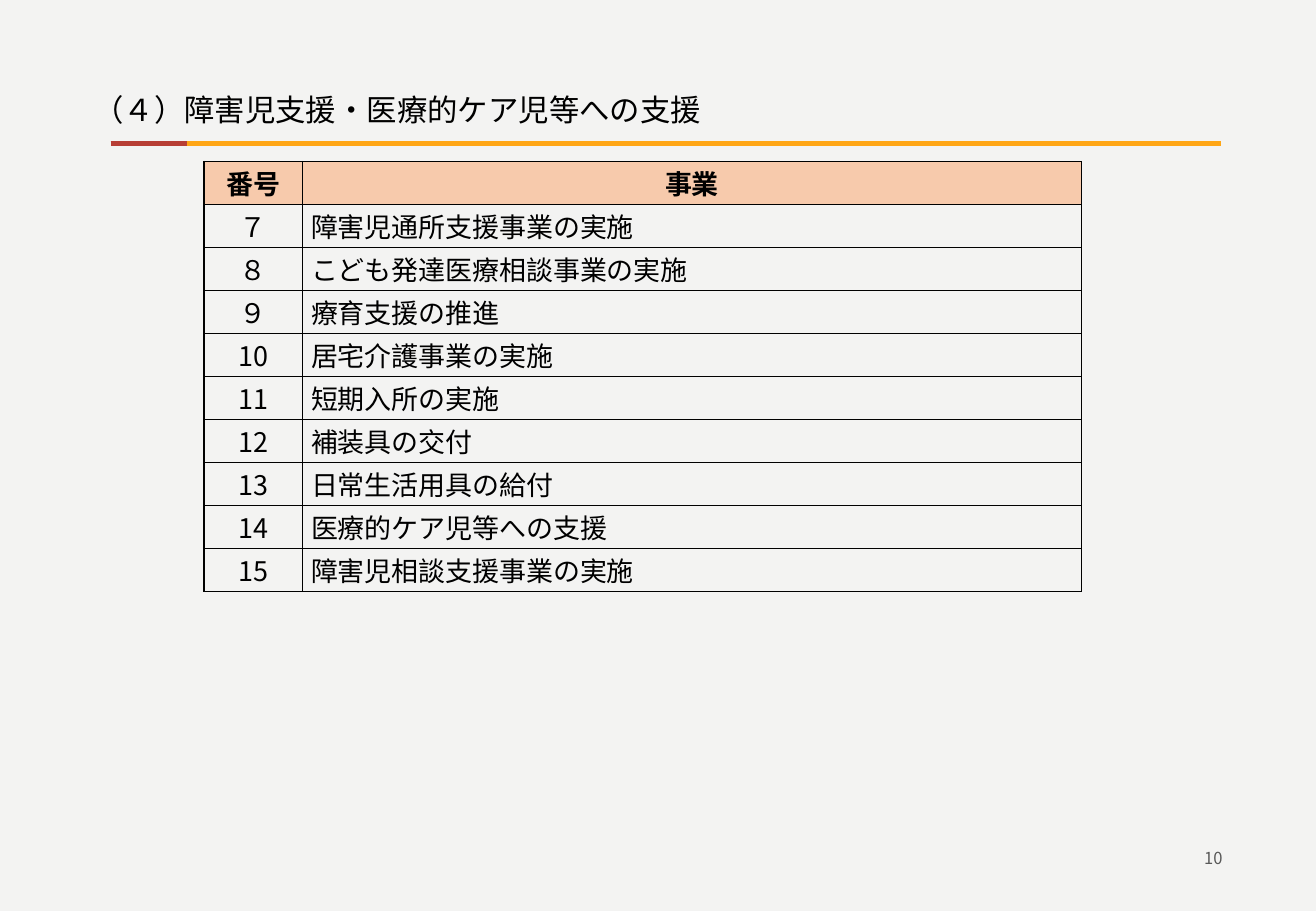
import pptx
import pptx.util
import pptx.dml.color
import pptx.enum.shapes
import pptx.enum.text
import pptx.oxml
import pptx.oxml.ns
import lxml.etree

Inches = pptx.util.Inches
Pt = pptx.util.Pt
ALIGN = pptx.enum.text.PP_ALIGN
MIDDLE = pptx.enum.text.MSO_ANCHOR.MIDDLE
NOTO = "Noto Sans CJK JP"

WORKS = [
    ("７", "障害児通所支援事業の実施"),
    ("８", "こども発達医療相談事業の実施"),
    ("９", "療育支援の推進"),
    ("10", "居宅介護事業の実施"),
    ("11", "短期入所の実施"),
    ("12", "補装具の交付"),
    ("13", "日常生活用具の給付"),
    ("14", "医療的ケア児等への支援"),
    ("15", "障害児相談支援事業の実施"),
]


def color(code):
    return pptx.dml.color.RGBColor.from_string(code)


def add_tag(parent, tag, **attrs):
    node = lxml.etree.SubElement(parent, pptx.oxml.ns.qn(tag))
    for key, value in attrs.items():
        node.set(key, str(value))
    return node


def write(para, text, size=16, font=NOTO, ink="000000", bold=False, align=ALIGN.LEFT):
    para.alignment = align
    run = para.add_run()
    run.text = text
    run.font.size = Pt(size)
    run.font.bold = bold
    run.font.color.rgb = color(ink)
    run.font.name = font
    add_tag(run.font._element, "a:ea", typeface=font)


def add_box(slide, left, top, width, height):
    box = slide.shapes.add_textbox(Inches(left), Inches(top), Inches(width), Inches(height))
    frame = box.text_frame
    frame.word_wrap = True
    frame.vertical_anchor = MIDDLE
    return frame.paragraphs[0]


def add_title(slide, left, top, width, height):
    para = add_box(slide, left, top, width, height)
    write(para, "（４", size=18)
    write(para, "）障害児支援・医療的ケア児等への支援", size=18, font="Arial")
    para._p.get_or_add_pPr().set("indent", str(Inches(0.15)))


def add_rule(slide, left, top, width, accent):
    # Full-width rule, then the short accent over its start
    for length, code in ((width, "FFA615"), (accent, "B73E35")):
        line = slide.shapes.add_connector(
            pptx.enum.shapes.MSO_CONNECTOR.STRAIGHT,
            Inches(left), Inches(top), Inches(left + length), Inches(top))
        line.line.color.rgb = color(code)
        line.line.width = Pt(3)
        add_tag(line._element.spPr, "a:effectLst")


def set_cell(cell, text, fill=None, **style):
    cell.margin_left = cell.margin_right = Inches(0.07)
    cell.margin_top = cell.margin_bottom = 0
    cell.vertical_anchor = MIDDLE
    write(cell.text_frame.paragraphs[0], text, **style)
    # Borders come before the fill in the cell properties
    props = cell._tc.get_or_add_tcPr()
    for side in ("a:lnL", "a:lnR", "a:lnT", "a:lnB"):
        edge = add_tag(props, side, w=Pt(1))
        add_tag(add_tag(edge, "a:solidFill"), "a:srgbClr", val="000000")
    if fill:
        cell.fill.solid()
        cell.fill.fore_color.rgb = color(fill)
    else:
        cell.fill.background()


def add_works(slide, left, top, width, height):
    count = len(WORKS) + 1
    table = slide.shapes.add_table(
        count, 2, Inches(left), Inches(top), Inches(width), Inches(height)).table
    table.first_row = table.horz_banding = False
    first = 0.81
    table.columns[0].width = Inches(first)
    table.columns[1].width = Inches(width - first)
    for row in table.rows:
        row.height = Inches(height / count)
    # Header row
    for col, text in enumerate(("番号", "事業")):
        set_cell(table.cell(0, col), text, fill="F7CAAC", bold=True, align=ALIGN.CENTER)
    # Numbered works
    for row, (number, name) in enumerate(WORKS, 1):
        set_cell(table.cell(row, 0), number, align=ALIGN.CENTER)
        set_cell(table.cell(row, 1), name)


def add_number(slide, left, top, width, height):
    para = add_box(slide, left, top, width, height)
    write(para, "10", size=9.8, ink="595959", align=ALIGN.RIGHT)


def main():
    deck = pptx.Presentation()
    deck.slide_width = Inches(10.83)
    deck.slide_height = Inches(7.5)
    slide = deck.slides.add_slide(deck.slide_layouts[6])
    slide.background.fill.solid()
    slide.background.fill.fore_color.rgb = color("F3F3F2")

    add_number(slide, 7.65, 6.91, 2.51, 0.31)
    add_title(slide, 0.52, 0.7, 9.93, 0.4)
    add_works(slide, 1.68, 1.33, 7.22, 3.54)
    add_rule(slide, 0.91, 1.18, 9.14, 0.63)
    deck.save("out.pptx")


if __name__ == "__main__":
    main()
